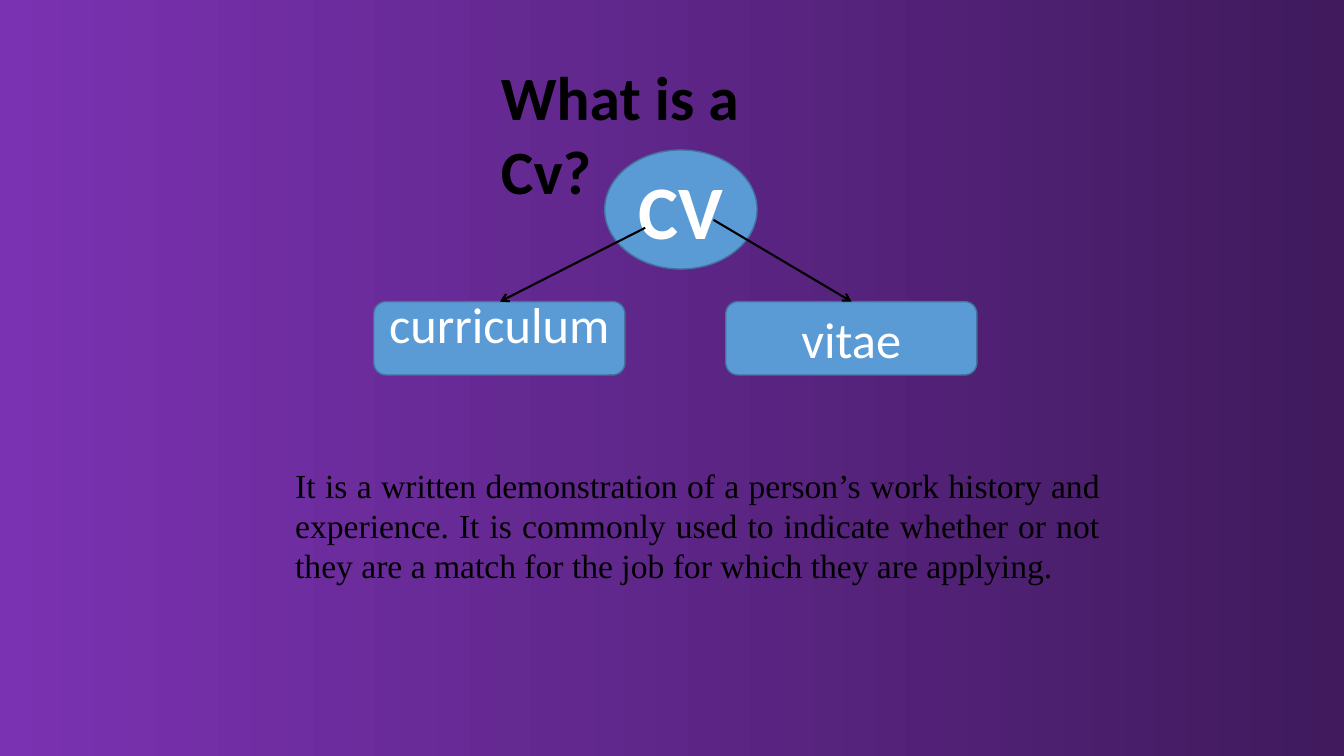
from dataclasses import dataclass

from lxml import etree
from pptx import Presentation
from pptx.dml.color import RGBColor
from pptx.enum.shapes import MSO_CONNECTOR, MSO_SHAPE
from pptx.enum.text import MSO_ANCHOR as Anchor, MSO_AUTO_SIZE as AutoSize, PP_ALIGN as Align
from pptx.oxml.ns import qn
from pptx.util import Cm, Pt


@dataclass(frozen=True)
class Theme:
    gradient: tuple = ("7B32B2", "401A5D")
    node_fill: str = "5B9BD5"
    node_line: str = "43739E"
    dark: str = "000000"
    light: str = "FFFFFF"
    heading_font: str = "Calibri"
    body_font: str = "Times New Roman"
    title_size: int = 44
    root_size: int = 54
    branch_size: int = 36
    body_size: int = 24


theme = Theme()


def write_text(shape, text, align, font_values, color, **frame_values):
    frame = shape.text_frame
    for name, value in {"word_wrap": True, **frame_values}.items():
        setattr(frame, name, value)
    paragraph = frame.paragraphs[0]
    paragraph.text = text
    paragraph.alignment = align
    font = paragraph.runs[0].font
    for name, value in font_values.items():
        setattr(font, name, value)
    font.color.rgb = RGBColor.from_string(color)


# Slide with title-only layout
presentation = Presentation()
presentation.slide_width, presentation.slide_height = Cm(33.87), Cm(19.05)
slide = presentation.slides.add_slide(presentation.slide_layouts[5])

# Background gradient, left to right
background = slide.background.fill
background.gradient()
background.gradient_angle = 0
for stop, color, position in zip(background.gradient_stops, theme.gradient, (0, 1)):
    stop.color.rgb = RGBColor.from_string(color)
    stop.position = position

# Title, broken over two lines by its right margin
title = slide.shapes.title
title_place = {"left": 12.37, "top": 1.35, "width": 9.12, "height": 2.13}
for name, value in title_place.items():
    setattr(title, name, Cm(value))
write_text(title, "What is a Cv?", Align.LEFT,
           {"name": theme.heading_font, "size": Pt(theme.title_size), "bold": True},
           theme.dark, vertical_anchor=Anchor.TOP, auto_size=AutoSize.NONE,
           margin_right=Cm(1.2))

# Root and its two branches; the bottom margin lifts the first word
branch_top, branch_width, branch_height = 7.6, 6.33, 1.85
nodes = [
    ("CV", MSO_SHAPE.OVAL, (15.24, 3.78, 3.84, 3.0), theme.root_size, True, 0.13),
    ("curriculum", MSO_SHAPE.ROUNDED_RECTANGLE,
     (9.42, branch_top, branch_width, branch_height), theme.branch_size, False, 0.9),
    ("vitae", MSO_SHAPE.ROUNDED_RECTANGLE,
     (18.29, branch_top, branch_width, branch_height), theme.branch_size, False, 0.13),
]
for text, kind, place, size, bold, margin_bottom in nodes:
    node = slide.shapes.add_shape(kind, *map(Cm, place))
    node.shadow.inherit = False
    node.fill.solid()
    node.fill.fore_color.rgb = RGBColor.from_string(theme.node_fill)
    node.line.color.rgb = RGBColor.from_string(theme.node_line)
    node.line.width = Pt(1)
    write_text(node, text, Align.CENTER,
               {"name": theme.heading_font, "size": Pt(size), "bold": bold},
               theme.light, vertical_anchor=Anchor.MIDDLE,
               margin_bottom=Cm(margin_bottom))

# Arrows from the root to the top of each branch
for start_x, start_y, end_x in [(16.26, 5.74, 12.6), (17.98, 5.54, 21.46)]:
    arrow = slide.shapes.add_connector(
        MSO_CONNECTOR.STRAIGHT, Cm(start_x), Cm(start_y), Cm(end_x), Cm(branch_top))
    arrow.line.color.rgb = RGBColor.from_string(theme.dark)
    arrow.line.width = Pt(1.5)
    etree.SubElement(arrow.line._get_or_add_ln(), qn("a:tailEnd"), type="arrow")
    etree.SubElement(arrow._element.spPr, qn("a:effectLst"))

# Definition
definition = slide.shapes.add_textbox(Cm(7.19), Cm(11.58), Cm(20.78), Cm(3.33))
write_text(definition,
           "It is a written demonstration of a person’s work history and experience. "
           "It is commonly used to indicate whether or not they are a match for the job "
           "for which they are applying.",
           Align.JUSTIFY, {"name": theme.body_font, "size": Pt(theme.body_size)},
           theme.dark, auto_size=AutoSize.SHAPE_TO_FIT_TEXT)

presentation.save("out.pptx")
